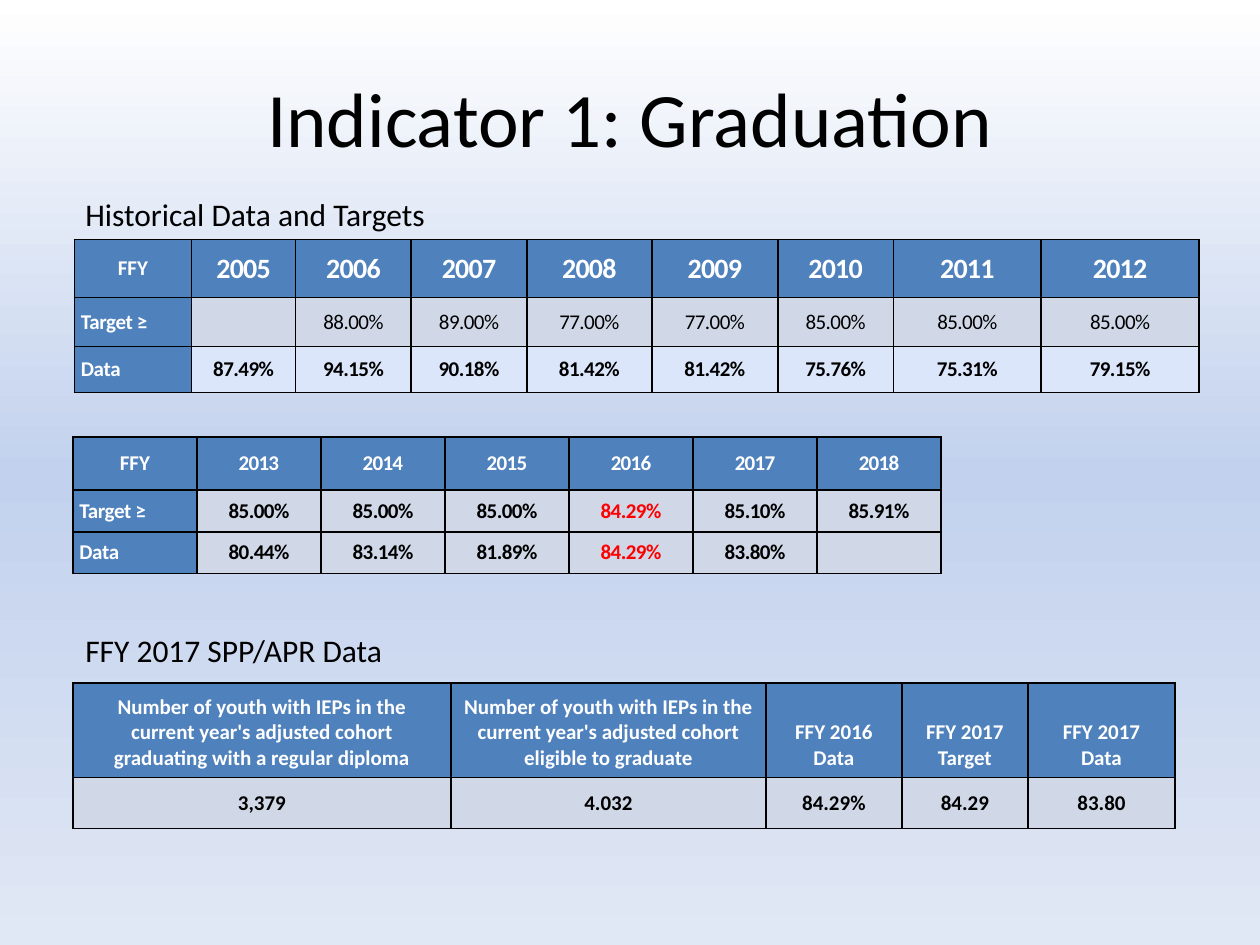
from copy import deepcopy

from lxml import etree
from pptx import Presentation
from pptx.dml.color import RGBColor
from pptx.enum import text
from pptx.oxml.ns import qn
from pptx.util import Cm, Pt

BLACK = RGBColor(0x00, 0x00, 0x00)
WHITE = RGBColor(0xFF, 0xFF, 0xFF)
RED = RGBColor(0xFF, 0x00, 0x00)
HEADER_BLUE = RGBColor(0x4F, 0x81, 0xBD)
BAND_GREY = RGBColor(0xD0, 0xD8, 0xE8)
BAND_BLUE = RGBColor(0xDC, 0xE6, 0xFA)
SKY = RGBColor(0xC2, 0xD1, 0xED)
PALE_SKY = RGBColor(0xE1, 0xE8, 0xF5)

CENTER, LEFT = text.PP_ALIGN.CENTER, text.PP_ALIGN.LEFT
MIDDLE, BOTTOM = text.MSO_ANCHOR.MIDDLE, text.MSO_ANCHOR.BOTTOM

HISTORY = [
    ["FFY", "2005", "2006", "2007", "2008", "2009", "2010", "2011", "2012"],
    ["Target ≥", "", "88.00%", "89.00%", "77.00%", "77.00%", "85.00%", "85.00%", "85.00%"],
    ["Data", "87.49%", "94.15%", "90.18%", "81.42%", "81.42%", "75.76%", "75.31%", "79.15%"],
]
RECENT = [
    ["FFY", "2013", "2014", "2015", "2016", "2017", "2018"],
    ["Target ≥", "85.00%", "85.00%", "85.00%", "84.29%", "85.10%", "85.91%"],
    ["Data", "80.44%", "83.14%", "81.89%", "84.29%", "83.80%", ""],
]
COHORT = [
    ["Number of youth with IEPs in the current year's adjusted cohort "
     "graduating with a regular diploma",
     "Number of youth with IEPs in the current year's adjusted cohort "
     "eligible to graduate",
     "FFY 2016\nData", "FFY 2017\nTarget", "FFY 2017\nData"],
    ["3,379", "4.032", "84.29%", "84.29", "83.80"],
]


def paint_background(slide):
    fill = slide.background.fill
    fill.gradient()
    fill.gradient_angle = 270
    stop_list = slide.element.find(".//" + qn("a:gsLst"))
    stop_list.insert(1, deepcopy(stop_list[0]))
    for stop, position, color in zip(fill.gradient_stops, (0, 0.5, 1), (WHITE, SKY, PALE_SKY)):
        stop.position = position
        stop.color.rgb = color


def style_text(frame, size, color, bold=False, align=LEFT, before=0, spacing=0):
    for paragraph in frame.paragraphs:
        paragraph.alignment = align
        paragraph.space_before = Pt(before)
        for run in paragraph.runs:
            run.font.name = "Calibri"
            run.font.size = Pt(size)
            run.font.bold = bold
            run.font.color.rgb = color
            if spacing:
                run._r.get_or_add_rPr().set("spc", str(round(spacing * 100)))


def add_label(slide, left, top, width, height, words, size, align=LEFT, anchor=text.MSO_ANCHOR.TOP):
    frame = slide.shapes.add_textbox(Cm(left), Cm(top), Cm(width), Cm(height)).text_frame
    frame.word_wrap = True
    frame.vertical_anchor = anchor
    frame.text = words
    style_text(frame, size, BLACK, align=align)


def paint_cell(cell, color):
    """Black 1 pt borders, then the fill."""
    properties = cell._tc.get_or_add_tcPr()
    for side in ("a:lnL", "a:lnR", "a:lnT", "a:lnB"):
        line = etree.SubElement(properties, qn(side), w=str(Pt(1)))
        solid = etree.SubElement(line, qn("a:solidFill"))
        etree.SubElement(solid, qn("a:srgbClr"), val=str(BLACK))
    cell.fill.solid()
    cell.fill.fore_color.rgb = color


def add_grid(slide, left, top, columns, heights, rows):
    """Place a table and yield each cell with its row and column."""
    table = slide.shapes.add_table(len(rows), len(columns), Cm(left), Cm(top),
                                   Cm(sum(columns)), Cm(sum(heights))).table
    for column, width in zip(table.columns, columns):
        column.width = Cm(width)
    for row, height in zip(table.rows, heights):
        row.height = Cm(height)
    for r, values in enumerate(rows):
        for c, value in enumerate(values):
            cell = table.cell(r, c)
            cell.text_frame.text = value
            yield cell, r, c


def add_ffy_table(slide, left, top, columns, heights, rows, year_size=12,
                  bold_targets=True, data_fill=BAND_GREY, red_year=None):
    """Years across the top, targets and data below."""
    for cell, r, c in add_grid(slide, left, top, columns, heights, rows):
        is_header = r == 0 or c == 0
        cell.margin_left = cell.margin_right = cell.margin_top = cell.margin_bottom = 0
        cell.vertical_anchor = MIDDLE
        if is_header:
            paint_cell(cell, HEADER_BLUE)
            color = WHITE
        else:
            paint_cell(cell, data_fill if r == 2 else BAND_GREY)
            color = RED if rows[0][c] == red_year else BLACK
        if c == 0 and r > 0:
            cell.margin_left = Cm(0.13)
        before = 3.8 if r < 2 else 2 if c == 0 else 0.3
        if c == 0:
            spacing = -0.2 if r else 0
        else:
            spacing = -0.3 if r else -0.4
        style_text(cell.text_frame,
                   size=year_size if r == 0 and c > 0 else 12,
                   color=color,
                   bold=is_header or r == 2 or bold_targets,
                   align=LEFT if c == 0 and r > 0 else CENTER,
                   before=before, spacing=spacing)


def add_cohort_table(slide, left, top, columns, heights, rows):
    """Cohort counts and rates for the reporting year."""
    for cell, r, _ in add_grid(slide, left, top, columns, heights, rows):
        cell.vertical_anchor = MIDDLE if r else BOTTOM
        paint_cell(cell, BAND_GREY if r else HEADER_BLUE)
        style_text(cell.text_frame, 12, BLACK if r else WHITE, bold=True, align=CENTER)


def main():
    deck = Presentation()
    deck.slide_width, deck.slide_height = Cm(25.4), Cm(19.05)
    slide = deck.slides.add_slide(deck.slide_layouts[6])
    paint_background(slide)

    # Title
    add_label(slide, 1.27, 0.76, 22.86, 3.18, "Indicator 1: Graduation", 44, CENTER, MIDDLE)

    # History and targets
    add_label(slide, 1.47, 3.81, 12.9, 1.02, "Historical Data and Targets", 18)
    add_ffy_table(slide, 1.5, 4.83,
                  [2.36, 2.1, 2.33, 2.33, 2.52, 2.54, 2.33, 2.98, 3.18],
                  [1.17, 0.98, 0.93], HISTORY,
                  year_size=16, bold_targets=False, data_fill=BAND_BLUE)
    add_ffy_table(slide, 1.47, 8.81, [2.5] * 7, [1.07, 0.84, 0.84], RECENT, red_year="2016")

    # Reporting year
    add_label(slide, 1.47, 12.6, 12.9, 1.02, "FFY 2017 SPP/APR Data", 18)
    add_cohort_table(slide, 1.47, 13.77, [7.62, 6.35, 2.74, 2.54, 2.97], [1.9, 1.03], COHORT)

    deck.save("out.pptx")


if __name__ == "__main__":
    main()
